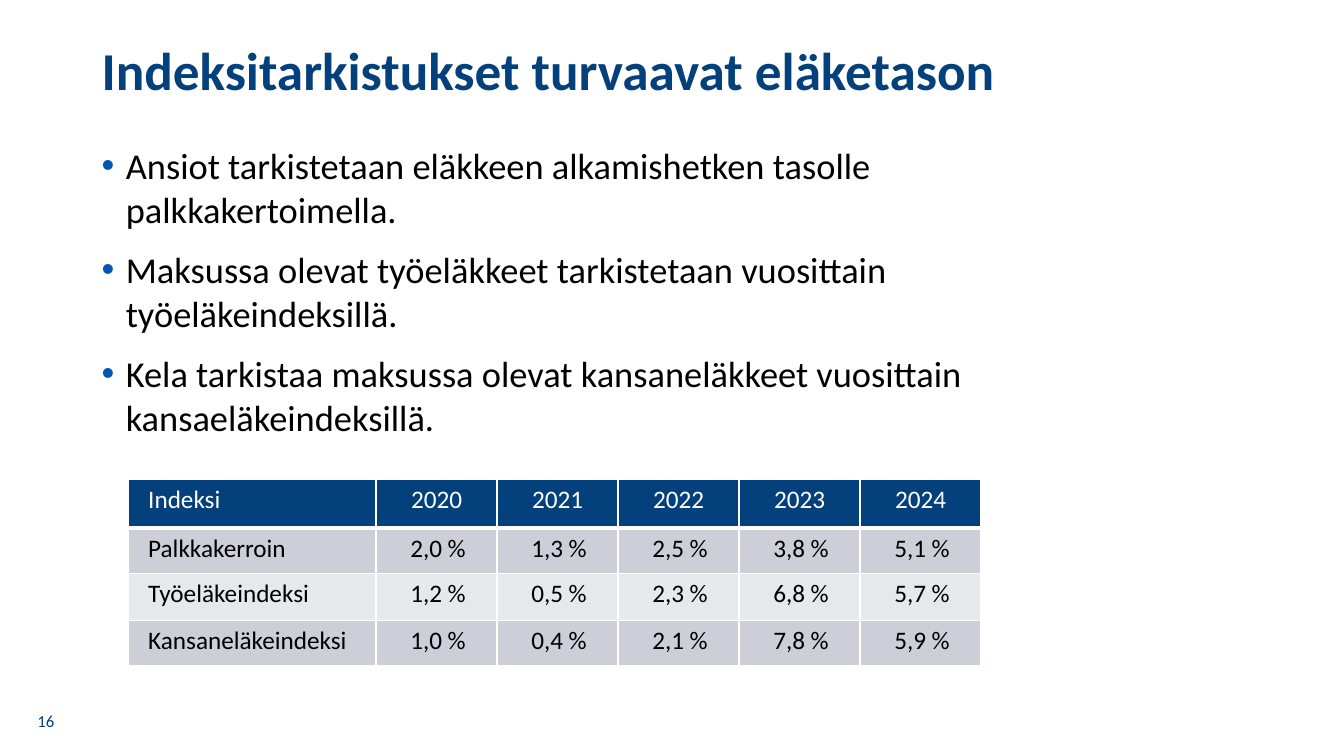
from lxml import etree
from pptx import Presentation
from pptx.dml.color import RGBColor
from pptx.enum.text import MSO_ANCHOR, PP_ALIGN
from pptx.oxml.ns import qn
from pptx.util import Inches, Pt

LEFT, CENTER, RIGHT = PP_ALIGN.LEFT, PP_ALIGN.CENTER, PP_ALIGN.RIGHT
TOP, MIDDLE = MSO_ANCHOR.TOP, MSO_ANCHOR.MIDDLE
FONT = "Calibri"
NAVY, BLUE, BLACK, WHITE = "03407C", "0356B5", "000000", "FFFFFF"
BANDS = ["CCCFD7", "E7E8EC"]

TITLE = "Indeksitarkistukset turvaavat eläketason"
POINTS = [
    "Ansiot tarkistetaan eläkkeen alkamishetken tasolle palkkakertoimella.",
    "Maksussa olevat työeläkkeet tarkistetaan vuosittain työeläkeindeksillä.",
    "Kela tarkistaa maksussa olevat kansaneläkkeet vuosittain kansaeläkeindeksillä.",
]
INDEX_ROWS = [
    ["Indeksi", "2020", "2021", "2022", "2023", "2024"],
    ["Palkkakerroin", "2,0 %", "1,3 %", "2,5 %", "3,8 %", "5,1 %"],
    ["Työeläkeindeksi", "1,2 %", "0,5 %", "2,3 %", "6,8 %", "5,7 %"],
    ["Kansaneläkeindeksi", "1,0 %", "0,4 %", "2,1 %", "7,8 %", "5,9 %"],
]
ROW_HEIGHTS = [0.48, 0.45, 0.47, 0.44]
NAME_WIDTH = 2.46


def color(hex_string):
    """Return the colour for a hex string."""
    return RGBColor.from_string(hex_string)


def style(paragraph, size, hex_string, bold=False):
    """Set the font of every run in a paragraph."""
    for run in paragraph.runs:
        run.font.name = FONT
        run.font.size = Pt(size)
        run.font.bold = bold
        run.font.color.rgb = color(hex_string)


def add_text_frame(slide, box, anchor=TOP):
    """Add a wrapping text box and return its text frame."""
    text_frame = slide.shapes.add_textbox(*map(Inches, box)).text_frame
    text_frame.word_wrap = True
    text_frame.vertical_anchor = anchor
    return text_frame


def add_title(slide, box):
    """Add the slide title."""
    text_frame = add_text_frame(slide, box)
    text_frame.text = TITLE
    paragraph = text_frame.paragraphs[0]
    paragraph.line_spacing = 0.9
    style(paragraph, 38, NAVY, bold=True)


def add_bullet(paragraph):
    """Give a paragraph a blue bullet with a hanging indent."""
    properties = paragraph._p.get_or_add_pPr()
    properties.set("marL", str(Inches(0.24)))
    properties.set("indent", str(-Inches(0.24)))
    bullet_color = etree.SubElement(properties, qn("a:buClr"))
    etree.SubElement(bullet_color, qn("a:srgbClr"), val=BLUE)
    etree.SubElement(properties, qn("a:buFont"), typeface="Arial")
    etree.SubElement(properties, qn("a:buChar"), char="•")


def add_points(slide, box):
    """Add the bulleted points."""
    text_frame = add_text_frame(slide, box)
    text_frame.text = "\n".join(POINTS)
    for paragraph in text_frame.paragraphs:
        add_bullet(paragraph)
        paragraph.space_after = Pt(12)
        style(paragraph, 26, BLACK)


def add_borders(cell, bottom_width):
    """Draw white borders around a cell."""
    properties = cell._tc.get_or_add_tcPr()
    widths = {"a:lnL": 1, "a:lnR": 1, "a:lnT": 1, "a:lnB": bottom_width}
    for position, (tag, width) in enumerate(widths.items()):
        line = etree.Element(qn(tag), w=str(Pt(width)))
        fill = etree.SubElement(line, qn("a:solidFill"))
        etree.SubElement(fill, qn("a:srgbClr"), val=WHITE)
        properties.insert(position, line)


def fill_cell(cell, text, row, column):
    """Write and format one cell of the index table."""
    header, name = row == 0, column == 0
    cell.text = text
    cell.margin_left = Inches(0.2 if name else 0.08)
    cell.margin_right = Inches(0.08 if header or name else 0.31)
    cell.margin_top = cell.margin_bottom = Inches(0.05)
    cell.fill.solid()
    cell.fill.fore_color.rgb = color(NAVY if header else BANDS[(row - 1) % 2])
    add_borders(cell, 3 if header else 1)
    paragraph = cell.text_frame.paragraphs[0]
    paragraph.alignment = LEFT if name else CENTER if header else RIGHT
    style(paragraph, 18, WHITE if header else BLACK)


def add_index_table(slide, box):
    """Add the table of yearly index changes."""
    column_count = len(INDEX_ROWS[0])
    frame = slide.shapes.add_table(len(INDEX_ROWS), column_count, *map(Inches, box))
    table = frame.table
    year_width = (box[2] - NAME_WIDTH) / (column_count - 1)
    for position, column in enumerate(table.columns):
        column.width = Inches(year_width if position else NAME_WIDTH)
    for row, height in zip(table.rows, ROW_HEIGHTS):
        row.height = Inches(height)
    for row, texts in enumerate(INDEX_ROWS):
        for column, text in enumerate(texts):
            fill_cell(table.cell(row, column), text, row, column)


def add_page_number(slide, box):
    """Add the page number."""
    text_frame = add_text_frame(slide, box, MIDDLE)
    text_frame.text = "16"
    paragraph = text_frame.paragraphs[0]
    paragraph.alignment = CENTER
    style(paragraph, 12, NAVY)


def main():
    """Build and save the presentation."""
    presentation = Presentation()
    presentation.slide_width = Inches(13.33)
    presentation.slide_height = Inches(7.5)
    slide = presentation.slides.add_slide(presentation.slide_layouts[6])
    add_page_number(slide, (0.2, 6.95, 0.51, 0.4))
    add_title(slide, (0.91, 0.39, 10.43, 0.97))
    add_points(slide, (0.91, 1.37, 10.43, 3.09))
    add_index_table(slide, (1.27, 4.76, 8.46, sum(ROW_HEIGHTS)))
    presentation.save("out.pptx")


if __name__ == "__main__":
    main()
